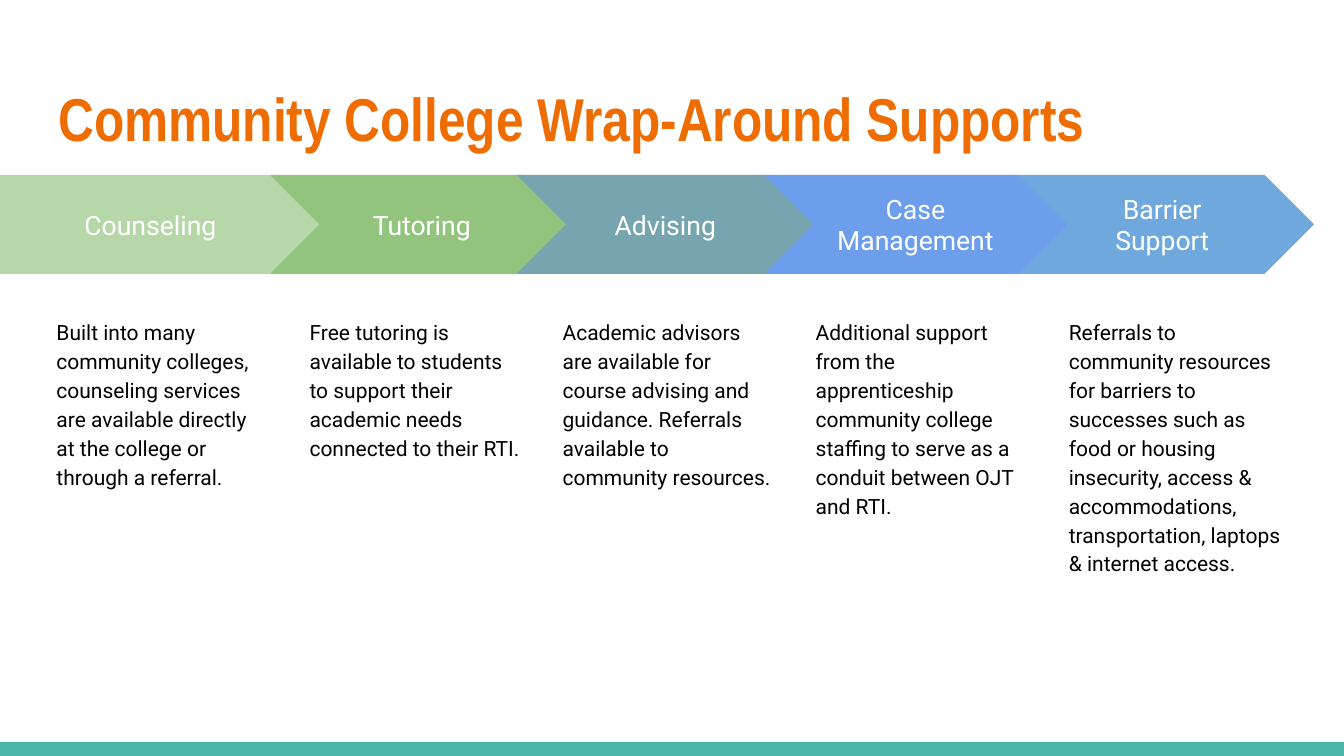
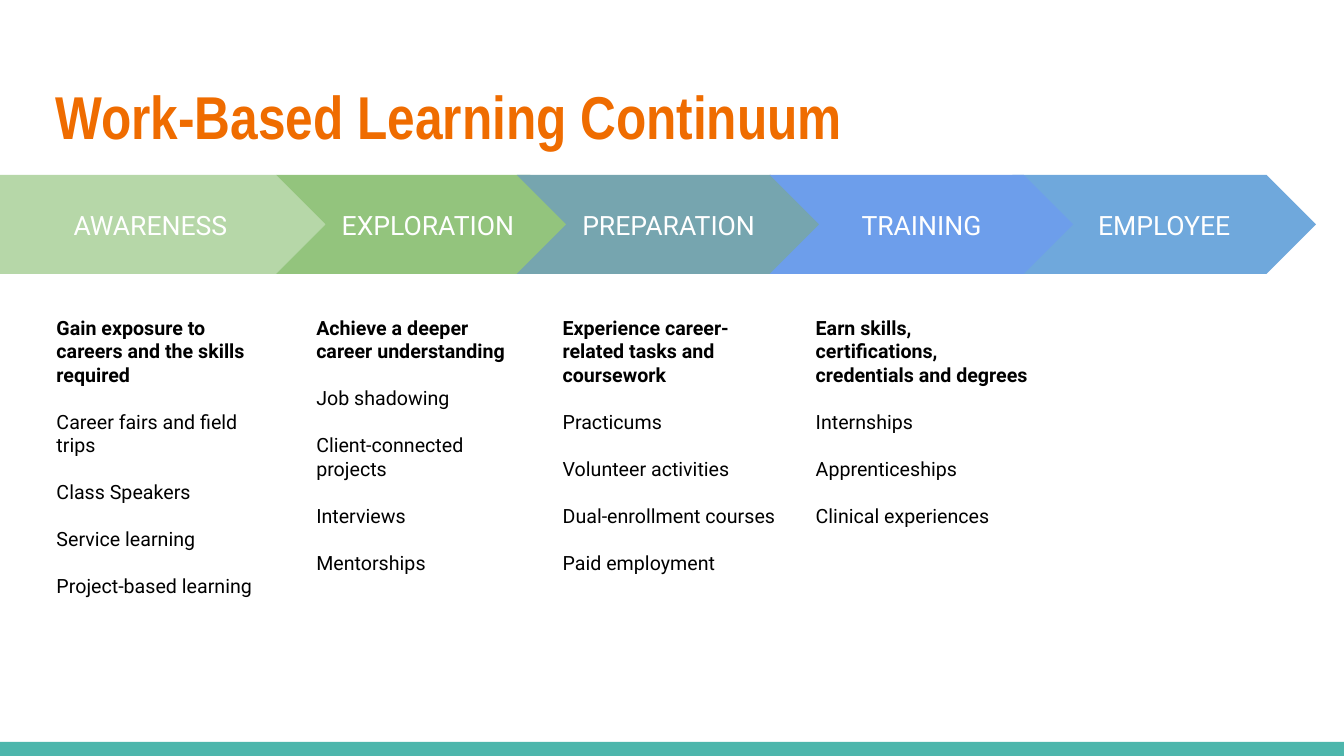
from dataclasses import dataclass

from pptx import Presentation
from pptx.dml.color import RGBColor
from pptx.enum.shapes import MSO_SHAPE
from pptx.enum.text import MSO_ANCHOR, PP_ALIGN
from pptx.util import Inches, Pt

RECTANGLE, PENTAGON, CHEVRON = MSO_SHAPE.RECTANGLE, MSO_SHAPE.PENTAGON, MSO_SHAPE.CHEVRON
TOP, MIDDLE = MSO_ANCHOR.TOP, MSO_ANCHOR.MIDDLE
LEFT, CENTER = PP_ALIGN.LEFT, PP_ALIGN.CENTER

ORANGE = RGBColor(0xEF, 0x6C, 0x00)
TEAL = RGBColor(0x4D, 0xB6, 0xAC)
WHITE = RGBColor(0xFF, 0xFF, 0xFF)
BLACK = RGBColor(0x00, 0x00, 0x00)
STAGE_COLORS = (
    RGBColor(0xB6, 0xD7, 0xA8),
    RGBColor(0x93, 0xC4, 0x7D),
    RGBColor(0x76, 0xA5, 0xAF),
    RGBColor(0x6D, 0x9E, 0xEB),
    RGBColor(0x6F, 0xA8, 0xDC),
)

TITLE_FONT = {"name": "Arial Narrow", "size": Pt(43.2), "bold": True}
STAGE_FONT = {"name": "Roboto", "size": Pt(19), "bold": False}
PROSE_FONT = {"name": "Roboto", "size": Pt(15), "bold": False}
ITEM_FONT = {"name": "Roboto", "size": Pt(14), "bold": False}
HEADING_FONT = ITEM_FONT | {"bold": True}
PROSE_SPACING = {"line_spacing": 1.15}
ITEM_SPACING = {"space_after": Pt(16.8)}

# All places and sizes are percentages of the slide's width or height.
ARROW_TOP, ARROW_HEIGHT = 23.15, 13.07
FIRST_ARROW_WIDTH, ARROW_WIDTH = 24.23, 22.58
SECOND_ARROW_LEFT, ARROW_PITCH = 20.1, 18.36
BODY_LEFT, BODY_PITCH, BODY_WIDTH = 3.23, 18.83, 17.78
BODY_TOP, BODY_HEIGHT = 40, 45.73
DRAW_ORDER = (0, 1, 2, 4, 3)  # the fourth arrow's tip lies over the fifth


@dataclass
class Stage:
    """One step; the shifts move its arrow and body off the regular pitch."""
    name: str
    body: tuple
    arrow_shift: float = 0
    body_shift: float = 0


SUPPORTS = (
    Stage("Counseling", ("Built into many community colleges, counseling services are "
                         "available directly at the college or through a referral.",)),
    Stage("Tutoring", ("Free tutoring is available to students to support their "
                       "academic needs connected to their RTI.",)),
    Stage("Advising ", ("Academic advisors are available for course advising and "
                        "guidance. Referrals available to community resources.",)),
    Stage("Case Management", ("Additional support from the apprenticeship community college "
                              "staffing to serve as a conduit between OJT and RTI.",)),
    Stage("Barrier Support", ("Referrals to community resources for barriers to successes "
                              "such as food or housing insecurity, access & accommodations, "
                              "transportation, laptops & internet access.",)),
)

CONTINUUM = (
    Stage("AWARENESS", ("Gain exposure to careers and the skills required",
                        "Career fairs and field trips", "Class Speakers",
                        "Service learning", "Project-based learning")),
    Stage("EXPLORATION", ("Achieve a deeper career understanding", "Job shadowing",
                          "Client-connected projects", "Interviews", "Mentorships"),
          arrow_shift=0.45, body_shift=0.5),
    Stage("PREPARATION ", ("Experience career-related tasks and coursework", "Practicums",
                           "Volunteer activities", "Dual-enrollment courses",
                           "Paid employment")),
    Stage("TRAINING", ("Earn skills, certifications, credentials and degrees",
                       "Internships", "Apprenticeships", "Clinical experiences"),
          arrow_shift=0.45),
    Stage("EMPLOYEE", (), arrow_shift=0.15),
)


def set_values(target, values):
    for attribute, value in values.items():
        setattr(target, attribute, value)


class Deck:
    def __init__(self):
        self.presentation = Presentation()
        self.presentation.slide_width = Inches(13.33)
        self.presentation.slide_height = Inches(7.5)
        self.slide = None

    def place(self, left, top, width, height):
        """Turn percentages of the slide into lengths."""
        across = self.presentation.slide_width / 100
        down = self.presentation.slide_height / 100
        return (round(left * across), round(top * down),
                round(width * across), round(height * down))

    def start_slide(self, title, left, top):
        self.slide = self.presentation.slides.add_slide(self.presentation.slide_layouts[6])
        self.shape(RECTANGLE, (0, 98.13, 100, 1.87), TEAL)
        self.text((left, top, 93.17, 13.73), [(title, TITLE_FONT)], ORANGE, MIDDLE)

    def shape(self, kind, box, color):
        shape = self.slide.shapes.add_shape(kind, *self.place(*box))
        shape.shadow.inherit = False
        shape.fill.solid()
        shape.fill.fore_color.rgb = color
        shape.line.fill.background()
        return shape

    def text(self, box, lines, color, anchor=TOP, spacing=None):
        holder = self.slide.shapes.add_textbox(*self.place(*box))
        self.fill_frame(holder.text_frame, lines, color, anchor, LEFT, spacing or {})

    def fill_frame(self, frame, lines, color, anchor, alignment, spacing):
        """Fill a text frame with (text, font) lines, one paragraph each."""
        margins = dict.fromkeys(
            ("margin_left", "margin_top", "margin_right", "margin_bottom"), Inches(0.13))
        set_values(frame, margins | {"word_wrap": True, "vertical_anchor": anchor})
        for index, (words, font) in enumerate(lines):
            paragraph = frame.add_paragraph() if index else frame.paragraphs[0]
            set_values(paragraph, {"alignment": alignment} | spacing)
            run = paragraph.add_run()
            run.text = words
            set_values(run.font, font)
            run.font.color.rgb = color

    def arrow(self, index, stage):
        if index:
            kind, width = CHEVRON, ARROW_WIDTH
            left = SECOND_ARROW_LEFT + (index - 1) * ARROW_PITCH + stage.arrow_shift
        else:
            kind, width, left = PENTAGON, FIRST_ARROW_WIDTH, 0
        arrow = self.shape(kind, (left, ARROW_TOP, width, ARROW_HEIGHT), STAGE_COLORS[index])
        self.fill_frame(arrow.text_frame, [(stage.name, STAGE_FONT)],
                        WHITE, MIDDLE, CENTER, {})

    def body(self, index, stage):
        """A single paragraph is prose; several are a bold heading with items."""
        if len(stage.body) == 1:
            fonts, spacing = [PROSE_FONT], PROSE_SPACING
        else:
            fonts = [HEADING_FONT] + [ITEM_FONT] * (len(stage.body) - 1)
            spacing = ITEM_SPACING
        left = BODY_LEFT + index * BODY_PITCH + stage.body_shift
        self.text((left, BODY_TOP, BODY_WIDTH, BODY_HEIGHT),
                  zip(stage.body, fonts), BLACK, spacing=spacing)

    def process(self, stages):
        for index in DRAW_ORDER:
            self.arrow(index, stages[index])
            if stages[index].body:
                self.body(index, stages[index])


def main():
    deck = Deck()
    deck.start_slide("Community College Wrap-Around Supports", 3.38, 8.67)
    deck.process(SUPPORTS)
    deck.start_slide("Work-Based Learning Continuum", 3.15, 8.4)
    deck.process(CONTINUUM)
    deck.presentation.save("out.pptx")


if __name__ == "__main__":
    main()
